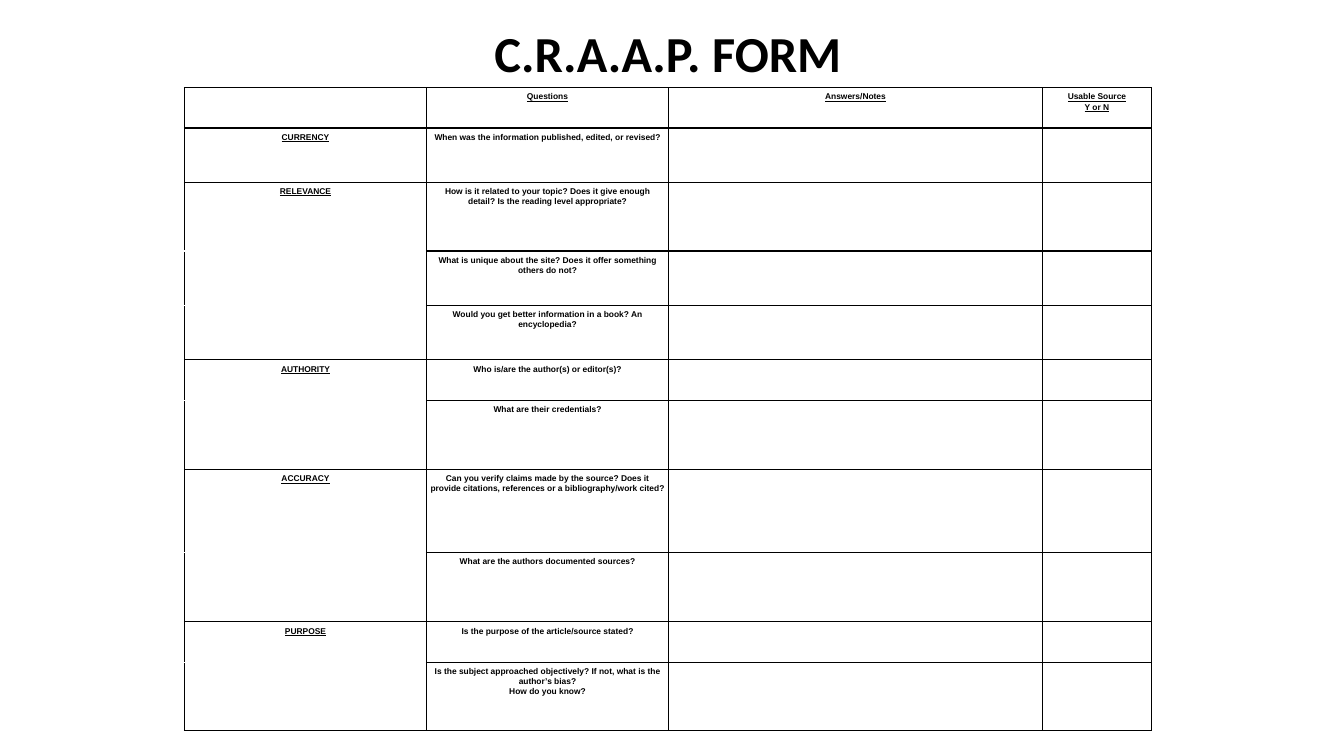
from dataclasses import dataclass

from lxml.etree import SubElement
from pptx import Presentation
from pptx.dml.color import RGBColor
from pptx.enum.text import MSO_ANCHOR, PP_ALIGN
from pptx.oxml.ns import qn
from pptx.table import _Cell as Cell
from pptx.text.text import _Paragraph as Paragraph
from pptx.util import Inches, Pt

BLACK = RGBColor(0x00, 0x00, 0x00)
WHITE = RGBColor(0xFF, 0xFF, 0xFF)
CELL_MARGIN = Inches(0.04)
COLUMN_WIDTHS = (2.4, 2.4, 3.71, 1.08)
HEADER_HEIGHT = 0.4
HEADERS = ("", "Questions", "Answers/Notes", "Usable Source\nY or N")


@dataclass
class Question:
    text: str
    height: float


@dataclass
class Criterion:
    name: str
    questions: list[Question]


CRITERIA = [
    Criterion("CURRENCY", [
        Question("When was the information published, edited, or revised?", 0.54),
    ]),
    Criterion("RELEVANCE", [
        Question("How is it related to your topic? Does it give enough detail? "
                 "Is the reading level appropriate?", 0.68),
        Question("What is unique about the site? Does it offer something others do not?", 0.54),
        Question("Would you get better information in a book? An encyclopedia?", 0.54),
    ]),
    Criterion("AUTHORITY", [
        Question("Who is/are the author(s) or editor(s)?", 0.4),
        Question("What are their credentials?", 0.69),
    ]),
    Criterion("ACCURACY", [
        Question("Can you verify claims made by the source? Does it provide citations, "
                 "references or a bibliography/work cited?", 0.82),
        Question("What are the authors documented sources?", 0.69),
    ]),
    Criterion("PURPOSE", [
        Question("Is the purpose of the article/source stated?", 0.4),
        Question("Is the subject approached objectively? If not, what is the author’s bias?\v"
                 "How do you know?", 0.68),
    ]),
]


def style_paragraph(paragraph: Paragraph, font_name: str, size: float, underline: bool = False) -> None:
    paragraph.alignment = PP_ALIGN.CENTER
    font = paragraph.font
    font.name, font.size, font.bold = font_name, Pt(size), True
    font.underline = underline
    font.color.rgb = BLACK


def set_borders(cell: Cell, top: RGBColor, bottom: RGBColor) -> None:
    properties = cell._tc.get_or_add_tcPr()
    sides = {"lnL": BLACK, "lnR": BLACK, "lnT": top, "lnB": bottom}
    for side, color in sides.items():
        line = SubElement(properties, qn(f"a:{side}"), w=str(Pt(1)))
        fill = SubElement(line, qn("a:solidFill"))
        SubElement(fill, qn("a:srgbClr"), val=str(color))


def fill_cell(cell: Cell, text: str = "", underline: bool = False,
              top: RGBColor = BLACK, bottom: RGBColor = BLACK) -> None:
    set_borders(cell, top, bottom)
    cell.fill.solid()
    cell.fill.fore_color.rgb = WHITE
    cell.margin_left = cell.margin_right = CELL_MARGIN
    cell.margin_top = cell.margin_bottom = CELL_MARGIN
    cell.vertical_anchor = MSO_ANCHOR.TOP
    cell.text = text
    for paragraph in cell.text_frame.paragraphs:
        paragraph.line_spacing = 1.07
        style_paragraph(paragraph, "Arial", 6, underline)


def main() -> None:
    presentation = Presentation()
    presentation.slide_width, presentation.slide_height = Inches(13.33), Inches(7.5)
    slide = presentation.slides.add_slide(presentation.slide_layouts[6])

    # Title
    title = slide.shapes.add_textbox(Inches(2), Inches(0.17), Inches(9.25), Inches(0.71))
    title.text_frame.word_wrap = True
    heading = title.text_frame.paragraphs[0]
    heading.text = "C.R.A.A.P. FORM"
    style_paragraph(heading, "Calibri", 36)

    # Table grid
    heights = [HEADER_HEIGHT] + [question.height for criterion in CRITERIA
                                 for question in criterion.questions]
    table = slide.shapes.add_table(
        len(heights), len(COLUMN_WIDTHS), Inches(1.83), Inches(0.87),
        Inches(sum(COLUMN_WIDTHS)), Inches(sum(heights))).table
    table.horz_banding = table.first_row = False
    for column, width in zip(table.columns, COLUMN_WIDTHS):
        column.width = Inches(width)
    for table_row, height in zip(table.rows, heights):
        table_row.height = Inches(height)

    # Header row
    for column_index, header in enumerate(HEADERS):
        fill_cell(table.cell(0, column_index), header, underline=True)

    # Criteria: white lines join the name cells of one criterion
    row = 1
    for criterion in CRITERIA:
        last = len(criterion.questions) - 1
        for index, question in enumerate(criterion.questions):
            fill_cell(table.cell(row, 0), criterion.name if index == 0 else "", underline=True,
                      top=BLACK if index == 0 else WHITE,
                      bottom=BLACK if index == last else WHITE)
            fill_cell(table.cell(row, 1), question.text)
            for answer_column in (2, 3):
                fill_cell(table.cell(row, answer_column))
            row += 1

    presentation.save("out.pptx")


if __name__ == "__main__":
    main()
